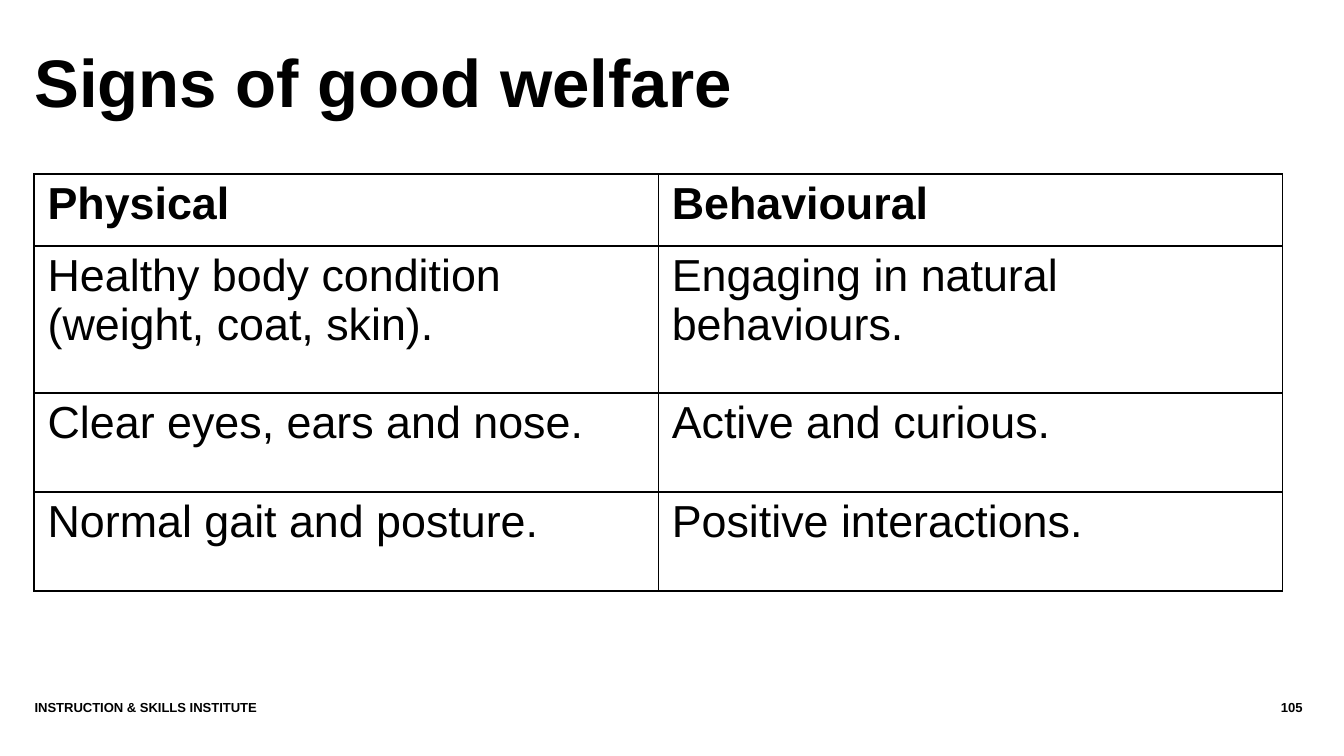
from dataclasses import dataclass

from lxml.etree import SubElement
from pptx import Presentation
from pptx.dml.color import RGBColor
from pptx.enum.text import MSO_ANCHOR as Anchor, PP_ALIGN as Align
from pptx.oxml.ns import qn
from pptx.util import Pt


@dataclass(frozen=True)
class Theme:
    font: str = "Arial"
    ink: str = "000000"
    paper: str = "FFFFFF"
    title_size: float = 36
    table_size: float = 24
    footer_size: float = 7
    border: float = 1


class SlideBuilder:
    def __init__(self, slide, theme):
        self.slide = slide
        self.theme = theme
        background = slide.background.fill
        background.solid()
        background.fore_color.rgb = RGBColor.from_string(theme.paper)

    def set_text(self, frame, text, size, bold=True, align=Align.LEFT, spacing=1.0):
        frame.word_wrap = True
        frame.text = text
        for paragraph in frame.paragraphs:
            paragraph.alignment = align
            paragraph.line_spacing = spacing
            for run in paragraph.runs:
                run.font.name = self.theme.font
                run.font.size = Pt(size)
                run.font.bold = bold
                run.font.color.rgb = RGBColor.from_string(self.theme.ink)

    def clear_margins(self, frame):
        frame.margin_left = frame.margin_right = 0
        frame.margin_top = frame.margin_bottom = 0

    def title(self, text, left, top, width, height):
        heading = self.slide.shapes.title
        heading.left, heading.top = Pt(left), Pt(top)
        heading.width, heading.height = Pt(width), Pt(height)
        frame = heading.text_frame
        self.clear_margins(frame)
        frame.vertical_anchor = Anchor.MIDDLE
        self.set_text(frame, text, self.theme.title_size, spacing=0.85)

    def footer(self, text, left, top, width, height, align=Align.LEFT):
        box = self.slide.shapes.add_textbox(Pt(left), Pt(top), Pt(width), Pt(height))
        frame = box.text_frame
        self.clear_margins(frame)
        frame.vertical_anchor = Anchor.TOP
        self.set_text(frame, text, self.theme.footer_size, align=align)

    def outline_cell(self, cell):
        """Draw all four borders; they must precede the fill in the cell XML."""
        properties = cell._tc.get_or_add_tcPr()
        for position, side in enumerate(("lnL", "lnR", "lnT", "lnB")):
            line = SubElement(properties, qn(f"a:{side}"), w=str(Pt(self.theme.border)))
            fill = SubElement(line, qn("a:solidFill"))
            SubElement(fill, qn("a:srgbClr"), val=self.theme.ink)
            properties.insert(position, line)

    def table(self, rows, row_heights, left, top, width):
        """Add an outlined table with equal columns and a bold first row."""
        column_count = len(rows[0])
        table = self.slide.shapes.add_table(
            len(rows), column_count, Pt(left), Pt(top), Pt(width), Pt(sum(row_heights))
        ).table
        table.horz_banding = False
        for column in table.columns:
            column.width = Pt(width / column_count)
        for row_index, (texts, height) in enumerate(zip(rows, row_heights)):
            table.rows[row_index].height = Pt(height)
            for column_index, text in enumerate(texts):
                cell = table.cell(row_index, column_index)
                cell.fill.background()
                self.outline_cell(cell)
                self.set_text(cell.text_frame, text, self.theme.table_size,
                              bold=row_index == 0, spacing=0.97)


WELFARE_SIGNS = [
    ("Physical", "Behavioural"),
    ("Healthy body condition (weight, coat, skin).", "Engaging in natural behaviours."),
    ("Clear eyes, ears and nose.", "Active and curious."),
    ("Normal gait and posture.", "Positive interactions."),
]


def main():
    deck = Presentation()
    deck.slide_width, deck.slide_height = Pt(720), Pt(405)
    title_only = deck.slide_layouts[5]
    builder = SlideBuilder(deck.slides.add_slide(title_only), Theme())

    builder.title("Signs of good welfare", 18.4, 19.4, 664.6, 54.7)
    builder.table(WELFARE_SIGNS, [38.7, 78.6, 53.1, 53.1], 18.3, 93.2, 668.8)
    builder.footer("INSTRUCTION & SKILLS INSTITUTE", 18.5, 375, 605.5, 21.6)
    builder.footer("105", 626.5, 375, 71.3, 21.6, Align.RIGHT)

    deck.save("out.pptx")


if __name__ == "__main__":
    main()
